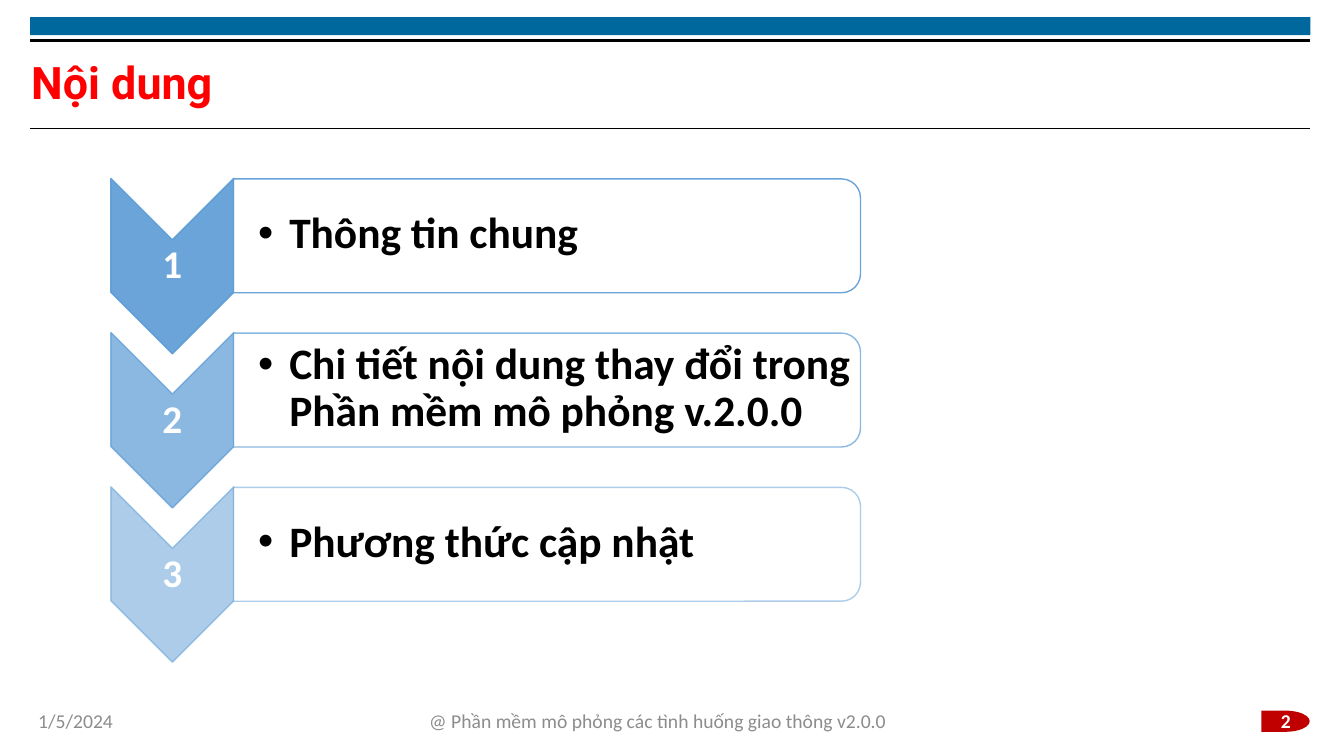
from dataclasses import dataclass

from lxml import etree
from pptx import Presentation
from pptx.dml.color import RGBColor
from pptx.enum.shapes import MSO_CONNECTOR, MSO_SHAPE
from pptx.enum.text import MSO_ANCHOR, MSO_AUTO_SIZE, PP_ALIGN
from pptx.oxml.ns import qn
from pptx.util import Inches, Pt

RECTANGLE, DELAY = MSO_SHAPE.RECTANGLE, MSO_SHAPE.FLOWCHART_DELAY
CHEVRON, ROUNDED_TOP = MSO_SHAPE.CHEVRON, MSO_SHAPE.ROUND_2_SAME_RECTANGLE
STRAIGHT = MSO_CONNECTOR.STRAIGHT
MIDDLE, NO_AUTOFIT = MSO_ANCHOR.MIDDLE, MSO_AUTO_SIZE.NONE
LEFT, CENTER = PP_ALIGN.LEFT, PP_ALIGN.CENTER

COMPARISON_LAYOUT = 4
SLIDE_WIDTH, SLIDE_HEIGHT = Inches(13.33), Inches(7.5)
COLUMNS, ROWS = 40, 30
STEP_PITCH = 6.12


@dataclass(frozen=True)
class Theme:
    bar: str = "00689D"
    badge: str = "C00000"
    title: str = "FF0000"
    step: str = "5B9BD5"
    muted: str = "8C8C8C"
    dark: str = "000000"
    light: str = "FFFFFF"
    title_font: str = "Roboto"
    body_font: str = "Calibri"
    title_size: int = 32
    list_size: int = 31
    number_size: int = 28
    footer_size: int = 14


@dataclass(frozen=True)
class Box:
    """A place on the grid, in columns and rows."""
    left: float
    top: float
    width: float
    height: float

    def down(self, rows: float) -> "Box":
        return Box(self.left, self.top + rows, self.width, self.height)


@dataclass(frozen=True)
class TextStyle:
    size: int
    color: str
    bold: bool = False
    align: int = CENTER
    font: str = Theme.body_font
    spacing: float = 1.0


@dataclass(frozen=True)
class Step:
    number: str
    text: str
    opacity: int
    placeholder: int


@dataclass(frozen=True)
class Label:
    text: str
    box: Box
    style: TextStyle


THEME = Theme()
TITLE_STYLE = TextStyle(THEME.title_size, THEME.title, True, LEFT, THEME.title_font, 0.9)
LIST_STYLE = TextStyle(THEME.list_size, THEME.dark, True, LEFT, spacing=0.9)
NUMBER_STYLE = TextStyle(THEME.number_size, THEME.light, True, spacing=0.9)

TITLE_BOX = Box(0.93, 2, 38.07, 2.76)
BAR_BOX = Box(0.9, 0.68, 38.1, 0.72)
BADGE_BOX = Box(37.54, 28.2, 1.44, 0.84)
CHEVRON_BOX = Box(3.3, 7.08, 3.66, 6.96)
NUMBER_BOX = Box(3.3, 9.52, 3.66, 2.08)
PANEL_BOX = Box(6.95, 7.1, 18.66, 4.52)
LIST_BOX = Box(6.96, 7.28, 18.54, 4.08)
RULES = ((5.08, 0.6), (1.6, 2.25))

STEPS = (
    Step("1", "Thông tin chung", 90, 1),
    Step("2", "Chi tiết nội dung thay đổi trong Phần mềm mô phỏng v.2.0.0", 70, 2),
    Step("3", "Phương thức cập nhật", 50, 3),
)
LABELS = (
    Label("1/5/2024", Box(0.84, 27.8, 3.93, 1.6),
          TextStyle(THEME.footer_size, THEME.muted, align=LEFT)),
    Label("@ Phần mềm mô phỏng các tình huống giao thông v2.0.0",
          Box(5.43, 27.8, 28.3, 1.6), TextStyle(THEME.footer_size, THEME.muted)),
    Label("2", Box(37.54, 27.8, 1.46, 1.6),
          TextStyle(THEME.footer_size, THEME.light, True)),
)


def across(columns: float) -> int:
    return round(SLIDE_WIDTH * columns / COLUMNS)


def down(rows: float) -> int:
    return round(SLIDE_HEIGHT * rows / ROWS)


def edges(box: Box) -> tuple[int, int, int, int]:
    return across(box.left), down(box.top), across(box.width), down(box.height)


def set_all(target, values: dict) -> None:
    for name, value in values.items():
        setattr(target, name, value)


def set_color(fill, color: str, opacity: int = 100) -> None:
    fill.solid()
    fill.fore_color.rgb = RGBColor.from_string(color)
    if opacity < 100:
        color_element = fill._xPr.find(qn("a:solidFill"))[0]
        etree.SubElement(color_element, qn("a:alpha"), val=str(opacity * 1000))


def write(shape, text: str, style: TextStyle, margins: tuple | None = None):
    """Fill a shape with one formatted paragraph; margins are in columns."""
    frame = shape.text_frame
    frame.text = text
    set_all(frame, {"word_wrap": True, "auto_size": NO_AUTOFIT, "vertical_anchor": MIDDLE})
    if margins is not None:
        sides = ("margin_left", "margin_top", "margin_right", "margin_bottom")
        set_all(frame, dict(zip(sides, map(across, margins))))
    paragraph = frame.paragraphs[0]
    set_all(paragraph, {"alignment": style.align, "line_spacing": style.spacing,
                        "space_before": Pt(0)})
    font = paragraph.runs[0].font
    set_all(font, {"name": style.font, "size": Pt(style.size), "bold": style.bold})
    font.color.rgb = RGBColor.from_string(style.color)
    return paragraph


def place(shape, box: Box) -> None:
    set_all(shape, dict(zip(("left", "top", "width", "height"), edges(box))))


def add_bullet(paragraph) -> None:
    paragraph.level = 1
    properties = paragraph._p.get_or_add_pPr()
    properties.set("marL", str(across(0.93)))
    properties.set("indent", str(-across(0.93)))
    etree.SubElement(properties, qn("a:buFont"), typeface="Arial")
    etree.SubElement(properties, qn("a:buChar"), char="•")


def add_shape(slide, kind: int, box: Box, color: str, opacity: int = 100,
              outline: int = 0, turned: bool = False) -> None:
    left, top, width, height = edges(box)
    if turned:  # the box holds the shape as seen after a quarter turn
        left, top = left + (width - height) // 2, top + (height - width) // 2
        width, height = height, width
    shape = slide.shapes.add_shape(kind, left, top, width, height)
    shape.rotation = 90 if turned else 0
    shape.shadow.inherit = False
    set_color(shape.fill, color, opacity)
    if outline:
        shape.line.width = Pt(1)
        set_color(shape.line.fill, THEME.step, outline)
    else:
        shape.line.fill.background()


def add_rule(slide, row: float, width: float) -> None:
    start, end, height = across(0.9), across(39), down(row)
    rule = slide.shapes.add_connector(STRAIGHT, start, height, end, height)
    rule.line.width = Pt(width)
    set_color(rule.line.fill, THEME.dark)
    etree.SubElement(rule._element.spPr, qn("a:effectLst"))


def add_label(slide, label: Label, margins: tuple | None = None) -> None:
    write(slide.shapes.add_textbox(*edges(label.box)), label.text, label.style, margins)


def add_step(slide, step: Step, shift: float) -> None:
    add_shape(slide, CHEVRON, CHEVRON_BOX.down(shift), THEME.step,
              step.opacity, step.opacity, True)
    add_label(slide, Label(step.number, NUMBER_BOX.down(shift), NUMBER_STYLE), (0.06,) * 4)
    add_shape(slide, ROUNDED_TOP, PANEL_BOX.down(shift), THEME.light, 90, step.opacity, True)
    body = slide.placeholders[step.placeholder]
    place(body, LIST_BOX.down(shift))
    add_bullet(write(body, step.text, LIST_STYLE, (0.72, 0.06, 0.06, 0.06)))
    slide.shapes._spTree.append(body._element)  # list text in front of its panel


def main() -> None:
    presentation = Presentation()
    set_all(presentation, {"slide_width": SLIDE_WIDTH, "slide_height": SLIDE_HEIGHT})
    slide = presentation.slides.add_slide(presentation.slide_layouts[COMPARISON_LAYOUT])
    # Header
    add_shape(slide, RECTANGLE, BAR_BOX, THEME.bar)
    for row, width in RULES:
        add_rule(slide, row, width)
    place(slide.shapes.title, TITLE_BOX)
    write(slide.shapes.title, "Nội dung", TITLE_STYLE, (0,) * 4)
    # Footer
    add_shape(slide, DELAY, BADGE_BOX, THEME.badge)
    for label in LABELS:
        add_label(slide, label)
    # Agenda steps
    for index, step in enumerate(STEPS):
        add_step(slide, step, index * STEP_PITCH)
    # Unused placeholder
    spare = slide.placeholders[4]._element
    spare.getparent().remove(spare)
    presentation.save("out.pptx")


if __name__ == "__main__":
    main()
